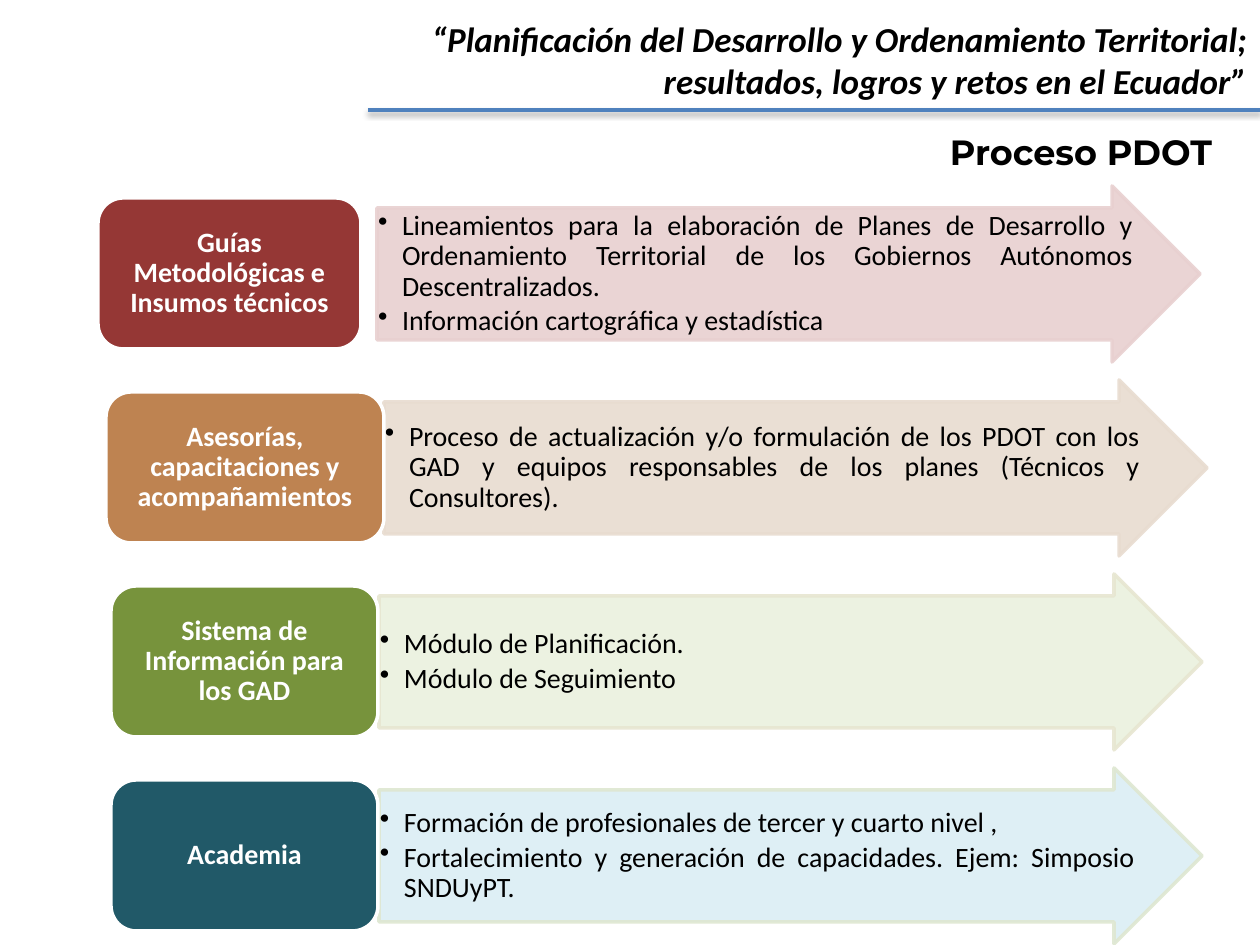
from dataclasses import dataclass

from lxml import etree
from pptx import Presentation
from pptx.dml.color import RGBColor
from pptx.enum.shapes import MSO_CONNECTOR, MSO_SHAPE as Shape
from pptx.enum.text import MSO_ANCHOR as Anchor, PP_ALIGN as Align
from pptx.oxml import parse_xml
from pptx.oxml.ns import nsdecls, qn
from pptx.util import Emu, Pt

PX = 914400 / 126  # EMU per px
ROW_TOP, ROW_PITCH = 186, 194
ARROW_W, ARROW_H = 823, 176
LABEL_H = 151
INDENT = 24


@dataclass
class Row:
    label: str
    label_x: int
    label_w: int
    label_fill: str
    arrow_x: int
    arrow_fill: str
    arrow_line: str
    bullets: list[str]


ROWS = [
    Row("Guías Metodológicas e Insumos técnicos", 98, 263, "953735",
        377, "E8D0D0", "E8D0D0",
        ["Lineamientos para la elaboración de Planes de Desarrollo y "
         "Ordenamiento Territorial de los Gobiernos Autónomos Descentralizados.",
         "Información cartográfica y estadística"]),
    Row("Asesorías, capacitaciones y acompañamientos", 106, 278, "BE8351",
        384, "E8DCD0", "E8DCD0",
        ["Proceso de actualización y/o formulación de los PDOT con los GAD y "
         "equipos responsables de los planes (Técnicos y Consultores)."]),
    Row("Sistema de Información para los GAD", 111, 267, "77933C",
        379, "EBF1DE", "E7E6D1",
        ["Módulo de Planificación.", "Módulo de Seguimiento"]),
    Row("Academia", 111, 267, "215968",
        379, "DBEEF4", "DEE7D1",
        ["Formación de profesionales de tercer y cuarto nivel ,",
         "Fortalecimiento y generación de capacidades. Ejem: Simposio SNDUyPT."]),
]


def px(n: int) -> Emu:
    return Emu(round(n * PX))


def rgb(code: str) -> RGBColor:
    return RGBColor.from_string(code)


def shadow_xml(blur: int, dist: int, alpha: int):
    return parse_xml(
        f'<a:effectLst {nsdecls("a")}><a:outerShdw blurRad="{Pt(blur)}" dist="{Pt(dist)}" '
        f'dir="5400000" rotWithShape="0"><a:srgbClr val="000000">'
        f'<a:alpha val="{alpha}000"/></a:srgbClr></a:outerShdw></a:effectLst>')


def add_run(p, text: str, size: int, color: str = "000000", font: str = "Calibri",
            bold: bool = False, italic: bool = False):
    r = p.add_run()
    r.text = text
    r.font.size, r.font.name = Pt(size), font
    r.font.bold, r.font.italic = bold, italic
    r.font.color.rgb = rgb(color)
    return r


def set_insets(tf, x: int, y: int) -> None:
    tf.margin_left = tf.margin_right = px(x)
    tf.margin_top = tf.margin_bottom = px(y)


def add_block(s, kind, x: int, y: int, w: int, h: int, fill: str, line: str,
              opacity: int = 100):
    sp = s.shapes.add_shape(kind, px(x), px(y), px(w), px(h))
    sp.shadow.inherit = False
    sp.fill.solid()
    sp.fill.fore_color.rgb = rgb(fill)
    sp.line.color.rgb = rgb(line)
    sp.line.width = Pt(2)
    if opacity < 100:
        for clr in sp._element.spPr.iter(qn("a:srgbClr")):
            etree.SubElement(clr, qn("a:alpha")).set("val", f"{opacity}000")
    tf = sp.text_frame
    tf.word_wrap = True
    tf.vertical_anchor = Anchor.MIDDLE
    return sp


def add_bullet(p, text: str) -> None:
    pPr = p._p.get_or_add_pPr()
    pPr.set("marL", str(px(INDENT)))
    pPr.set("indent", str(-px(INDENT)))
    etree.SubElement(pPr, qn("a:buChar")).set("char", "•")
    p.alignment = Align.JUSTIFY
    p.line_spacing = 0.9
    p.space_after = Pt(2.4)
    add_run(p, text, 16)


def add_row(s, row: Row, top: int) -> None:
    # Arrow with its bullets
    sp = add_block(s, Shape.RIGHT_ARROW, row.arrow_x, top, ARROW_W, ARROW_H,
                   row.arrow_fill, row.arrow_line, 90)
    sp.adjustments[0], sp.adjustments[1] = 0.75, 0.5
    tf = sp.text_frame
    set_insets(tf, 1, 1)
    for i, text in enumerate(row.bullets):
        add_bullet(tf.add_paragraph() if i else tf.paragraphs[0], text)

    # Label
    sp = add_block(s, Shape.ROUNDED_RECTANGLE, row.label_x, top + (ARROW_H - LABEL_H) // 2,
                   row.label_w, LABEL_H, row.label_fill, "FFFFFF")
    set_insets(sp.text_frame, 8, 4)
    p = sp.text_frame.paragraphs[0]
    p.alignment = Align.CENTER
    p.line_spacing = 0.9
    add_run(p, row.label, 16, "FFFFFF", bold=True)


def add_title(s, text: str) -> None:
    sp = s.shapes.title
    sp.left, sp.top, sp.width, sp.height = px(902), px(113), px(358), px(77)
    tf = sp.text_frame
    tf.word_wrap = True
    tf.vertical_anchor = Anchor.MIDDLE
    p = tf.paragraphs[0]
    p.alignment = Align.CENTER
    r = add_run(p, text, 20, font="Montserrat", bold=True)
    r._r.get_or_add_rPr().find(qn("a:solidFill")).addnext(shadow_xml(3, 2, 40))


def add_header(s, lines: list[str]) -> None:
    sp = s.shapes.add_textbox(px(212), px(11), px(1048), px(97))
    tf = sp.text_frame
    tf.word_wrap = True
    for i, text in enumerate(lines):
        p = tf.add_paragraph() if i else tf.paragraphs[0]
        p.alignment = Align.RIGHT
        add_run(p, text, 20, bold=True, italic=True)

    # Rule below the header
    rule = s.shapes.add_connector(MSO_CONNECTOR.STRAIGHT, px(368), px(110), px(1260), px(110))
    rule.line.color.rgb = rgb("4F81BD")
    rule.line.width = Pt(2)
    rule._element.spPr.append(shadow_xml(3, 2, 38))


def main() -> None:
    prs = Presentation()
    prs.slide_width, prs.slide_height = px(1260), px(945)
    s = prs.slides.add_slide(prs.slide_layouts[5])
    add_title(s, "Proceso PDOT")
    add_header(s, ["“Planificación del Desarrollo y Ordenamiento Territorial;",
                   "resultados, logros y retos en el Ecuador”"])
    for i, row in enumerate(ROWS):
        add_row(s, row, ROW_TOP + i * ROW_PITCH)
    prs.save("out.pptx")


if __name__ == "__main__":
    main()
